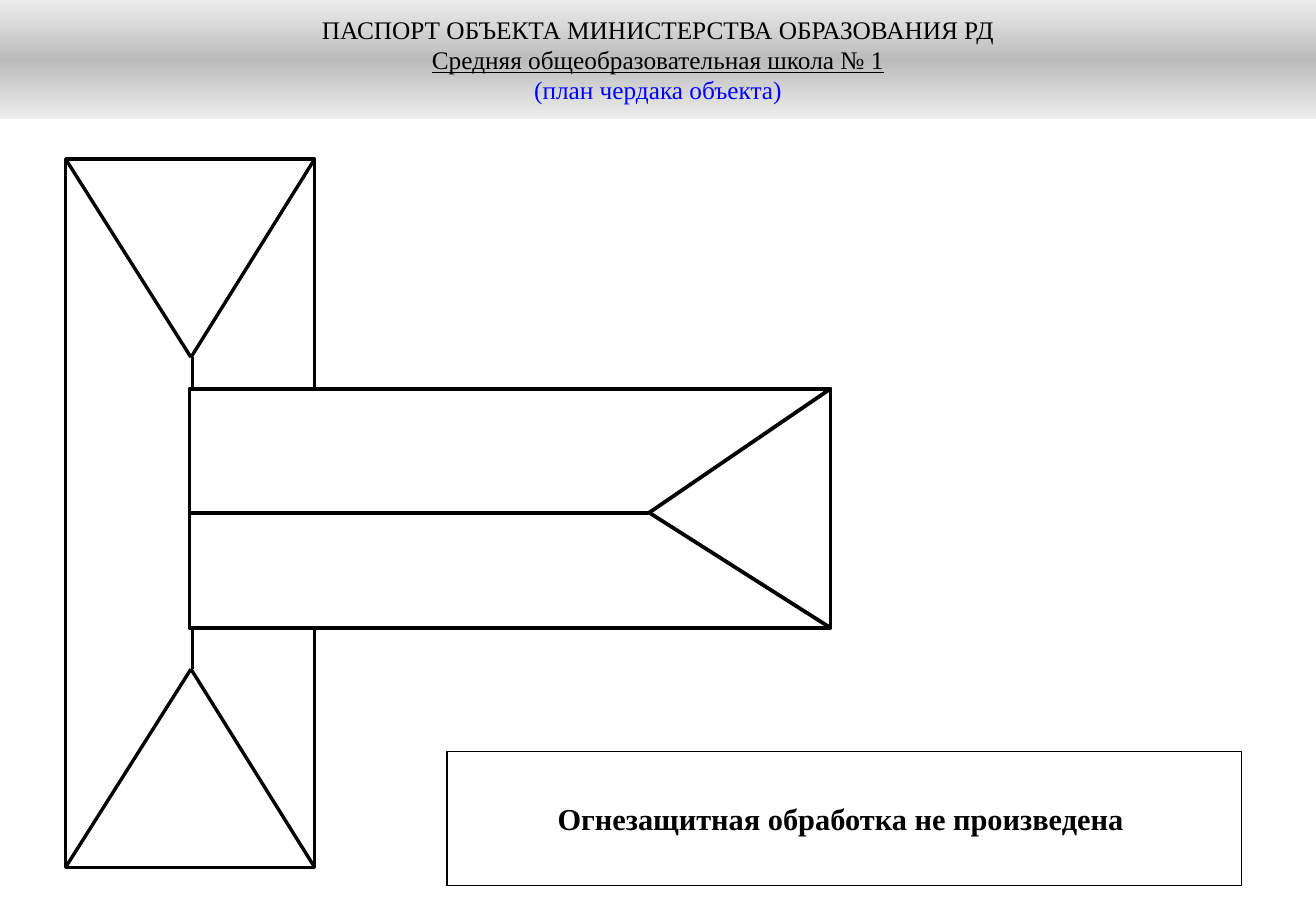
from copy import deepcopy

from pptx import Presentation
from pptx.dml.color import RGBColor
from pptx.enum import shapes, text
from pptx.oxml.ns import qn
from pptx.util import Pt

COLORS = {"black": "000000", "white": "FFFFFF", "blue": "0000FF",
          "edge": "EDEDED", "middle": "BCBCBC"}
FONT = "Times New Roman"


def color(name):
    """Return the named palette colour."""
    return RGBColor.from_string(COLORS[name])


def style_text(p, size, bold=False, ink="black"):
    """Centre a paragraph and set its font."""
    p.alignment = text.PP_ALIGN.CENTER
    p.font.name, p.font.size, p.font.bold = FONT, Pt(size), bold
    p.font.color.rgb = color(ink)


def add_box(s, x, y, w, h, weight):
    """Draw a white rectangle with a black outline."""
    sp = s.shapes.add_shape(shapes.MSO_SHAPE.RECTANGLE, Pt(x), Pt(y), Pt(w), Pt(h))
    sp.shadow.inherit = False
    sp.fill.solid()
    sp.fill.fore_color.rgb = color("white")
    sp.line.color.rgb = color("black")
    sp.line.width = Pt(weight)
    return sp


def add_line(s, start, end, weight):
    """Draw a black line between two points."""
    line = s.shapes.add_connector(
        shapes.MSO_CONNECTOR.STRAIGHT, *(Pt(v) for v in (*start, *end)))
    line.line.color.rgb = color("black")
    line.line.width = Pt(weight)
    sp_pr = line._element.spPr
    sp_pr.append(sp_pr.makeelement(qn("a:effectLst"), {}))


def add_hip(s, corners, apex, weight):
    """Join the corners of a roof end to the end of its ridge."""
    for corner in corners:
        add_line(s, corner, apex, weight)


def add_header(s, x, y, w, h):
    """Fill the title with the gradient band and its three lines."""
    sp = s.shapes.title
    sp.left, sp.top, sp.width, sp.height = Pt(x), Pt(y), Pt(w), Pt(h)
    sp.fill.gradient()
    sp.fill.gradient_angle = 90
    gs_lst = sp._element.spPr.find(qn("a:gradFill")).find(qn("a:gsLst"))
    gs_lst.append(deepcopy(gs_lst[0]))
    for stop, name, position in zip(
            sp.fill.gradient_stops, ("edge", "middle", "edge"), (0, 0.5, 1)):
        stop.color.rgb = color(name)
        stop.position = position
    tf = sp.text_frame
    tf.auto_size = text.MSO_AUTO_SIZE.NONE
    tf.word_wrap = True
    tf.vertical_anchor = text.MSO_ANCHOR.MIDDLE
    tf.text = ("ПАСПОРТ ОБЪЕКТА МИНИСТЕРСТВА ОБРАЗОВАНИЯ РД\n"
               "Средняя общеобразовательная школа № 1\n"
               "(план чердака объекта)")
    for p, ink in zip(tf.paragraphs, ("black", "black", "blue")):
        style_text(p, 15, ink=ink)
    tf.paragraphs[1].font.underline = True


def add_main_roof(s, x, y, w, h):
    """Draw the upright roof with a hip at each end."""
    weight, depth, ridge = 2, 117.5, x + w / 2 + 1.5
    add_box(s, x, y, w, h, weight)
    add_line(s, (ridge, y + depth), (ridge, y + h - depth), weight)
    for edge, tip in ((y, y + depth), (y + h, y + h - depth)):
        add_hip(s, ((x, edge), (x + w, edge)), (x + w / 2 + 0.5, tip), weight)


def add_wing_roof(s, x, y, w, h):
    """Draw the side roof with a hip at its right end."""
    weight, apex = 2.25, (x + w - 107.5, y + 73.5)
    add_box(s, x, y, w, h, weight)
    add_line(s, (x, apex[1]), apex, weight)
    add_hip(s, ((x + w, y), (x + w, y + h)), apex, weight)


def add_note(s, x, y, w, h):
    """Draw the framed fire protection note."""
    tf = add_box(s, x, y, w, h, 0.75).text_frame
    tf.word_wrap = False
    tf.vertical_anchor = text.MSO_ANCHOR.MIDDLE
    p = tf.paragraphs[0]
    p.text = "Огнезащитная обработка не произведена "
    style_text(p, 18, bold=True)


def main():
    """Build the attic plan slide."""
    prs = Presentation()
    prs.slide_width, prs.slide_height = Pt(780), Pt(540)
    s = prs.slides.add_slide(prs.slide_layouts[5])
    add_header(s, 0, 0, 780, 70.5)
    add_main_roof(s, 38.9, 94.3, 147.6, 419.8)
    add_wing_roof(s, 112.3, 230.4, 380, 141.8)
    add_note(s, 265, 445.7, 471, 79.2)
    prs.save("out.pptx")


if __name__ == "__main__":
    main()
